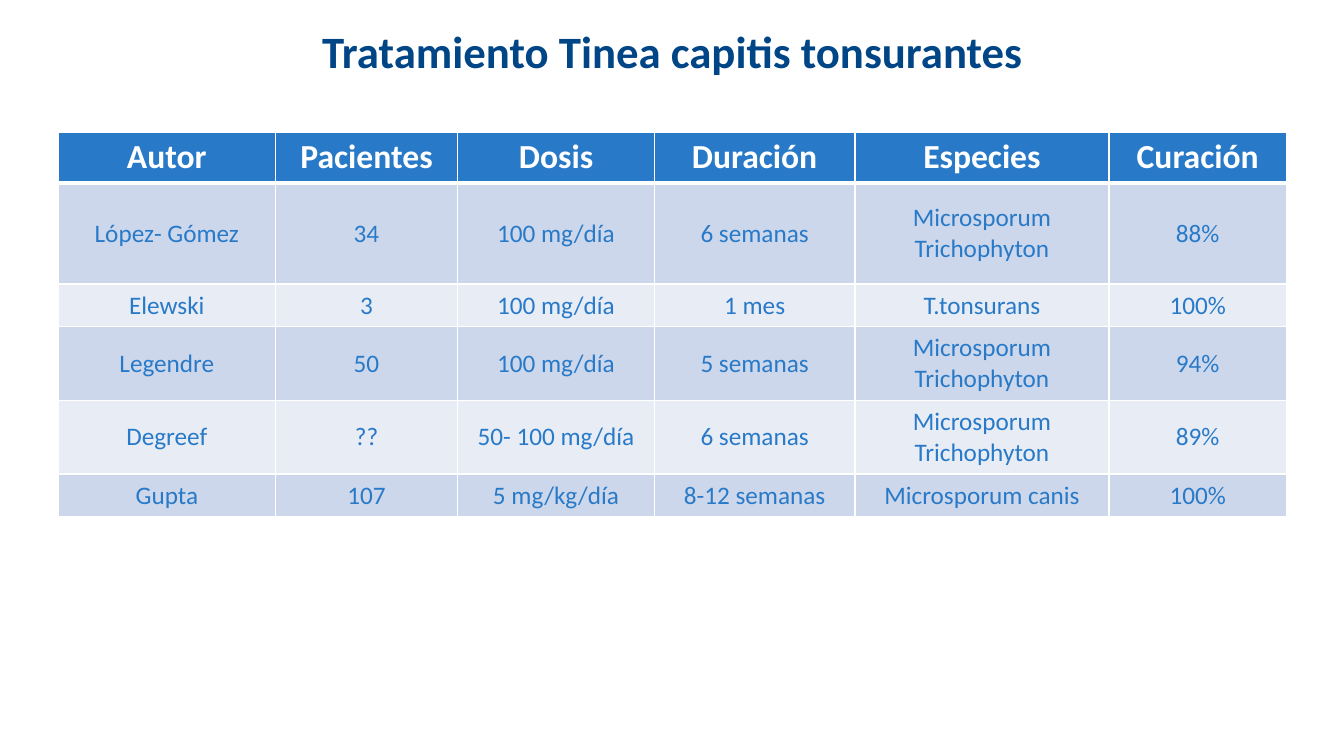
from lxml.etree import SubElement
from pptx import Presentation
from pptx.dml.color import RGBColor
from pptx.enum.text import MSO_ANCHOR, PP_ALIGN
from pptx.oxml.ns import qn
from pptx.util import Inches, Pt

COLORS = {
    "title": "004586",
    "blue": "287AC8",
    "white": "FFFFFF",
    "odd_row": "CDD7EB",
    "even_row": "E8ECF5",
}
FONT = "Calibri"
COLUMN_WIDTHS = [2.15, 1.81, 1.95, 1.99, 2.52, 1.76]
ROW_HEIGHTS = [0.49, 1, 0.42, 0.73, 0.73, 0.42]
STUDIES = [
    ["Autor", "Pacientes", "Dosis", "Duración", "Especies", "Curación"],
    ["López- Gómez", "34", "100 mg/día", "6 semanas", "Microsporum Trichophyton", "88%"],
    ["Elewski", "3", "100 mg/día", "1 mes", "T.tonsurans", "100%"],
    ["Legendre", "50", "100 mg/día", "5 semanas", "Microsporum Trichophyton", "94%"],
    ["Degreef", "??", "50- 100 mg/día", "6 semanas", "Microsporum Trichophyton", "89%"],
    ["Gupta", "107", "5 mg/kg/día", "8-12 semanas", "Microsporum canis", "100%"],
]


def rgb(name):
    return RGBColor.from_string(COLORS[name])


def write_centered(frame, text, size, color, bold):
    paragraph = frame.paragraphs[0]
    paragraph.text = text
    paragraph.alignment = PP_ALIGN.CENTER
    paragraph.font.name = FONT
    paragraph.font.size = Pt(size)
    paragraph.font.bold = bold
    paragraph.font.color.rgb = rgb(color)


def add_borders(cell, top, bottom):
    properties = cell._tc.get_or_add_tcPr()
    for side, width in (("L", 1), ("R", 1), ("T", top), ("B", bottom)):
        border = SubElement(properties, qn(f"a:ln{side}"), w=str(Pt(width)))
        fill = SubElement(border, qn("a:solidFill"))
        SubElement(fill, qn("a:srgbClr"), val=COLORS["white"])


def add_title(slide, left, top, width, height):
    title = slide.shapes.add_textbox(
        Inches(left), Inches(top), Inches(width), Inches(height)
    )
    frame = title.text_frame
    frame.word_wrap = True
    frame.vertical_anchor = MSO_ANCHOR.MIDDLE
    write_centered(frame, "Tratamiento Tinea capitis tonsurantes", 32, "title", True)


def format_cell(cell, text, row):
    is_header = row == 0
    add_borders(cell, top=3 if row == 1 else 1, bottom=3 if is_header else 1)
    cell.fill.solid()
    if is_header:
        cell.fill.fore_color.rgb = rgb("blue")
        write_centered(cell.text_frame, text, 24, "white", True)
    else:
        cell.fill.fore_color.rgb = rgb("odd_row" if row % 2 else "even_row")
        cell.vertical_anchor = MSO_ANCHOR.MIDDLE
        cell.margin_top = cell.margin_bottom = Inches(0.06)
        write_centered(cell.text_frame, text, 18, "blue", False)


def add_studies_table(slide, left, top):
    studies = slide.shapes.add_table(
        len(STUDIES), len(COLUMN_WIDTHS), Inches(left), Inches(top),
        Inches(sum(COLUMN_WIDTHS)), Inches(sum(ROW_HEIGHTS)),
    ).table
    for column, width in zip(studies.columns, COLUMN_WIDTHS):
        column.width = Inches(width)
    for row, (values, height) in enumerate(zip(STUDIES, ROW_HEIGHTS)):
        studies.rows[row].height = Inches(height)
        for column, text in enumerate(values):
            format_cell(studies.cell(row, column), text, row)


def main():
    presentation = Presentation()
    presentation.slide_width = Inches(13.33)
    presentation.slide_height = Inches(7.5)
    slide = presentation.slides.add_slide(presentation.slide_layouts[6])
    add_studies_table(slide, 0.58, 1.31)
    add_title(slide, 0.67, 0.17, 12, 0.66)
    presentation.save("out.pptx")


if __name__ == "__main__":
    main()
